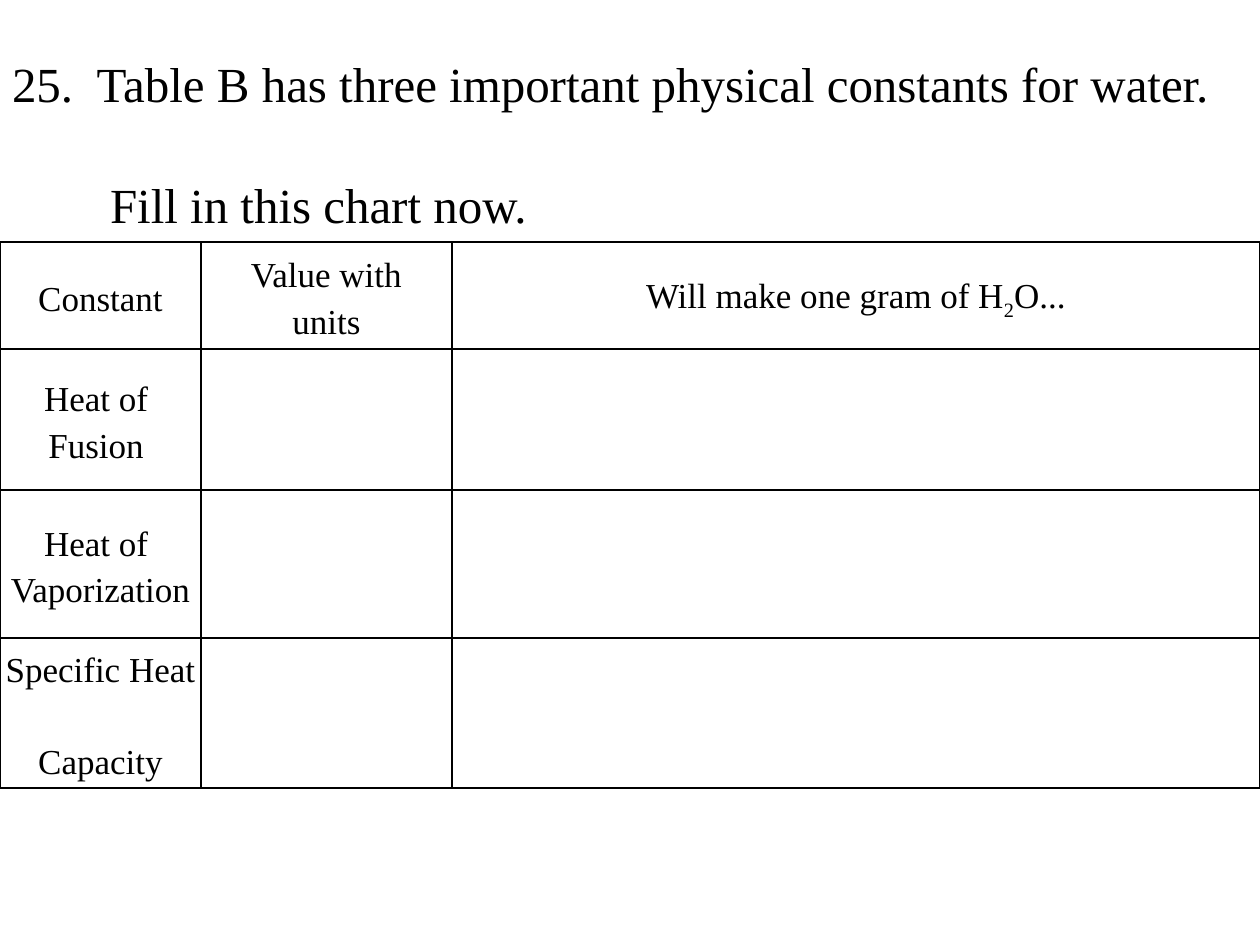
from dataclasses import dataclass

from lxml import etree
from pptx import Presentation
from pptx.dml.color import RGBColor
from pptx.enum.text import MSO_ANCHOR, MSO_AUTO_SIZE, PP_ALIGN
from pptx.oxml.ns import qn
from pptx.util import Pt

LEFT, CENTER = PP_ALIGN.LEFT, PP_ALIGN.CENTER
TOP, MIDDLE = MSO_ANCHOR.TOP, MSO_ANCHOR.MIDDLE
NO_AUTOFIT = MSO_AUTO_SIZE.NONE
TITLE_ONLY = 5

EMU_PER_PX = 914400 // 126
FONT = "Times New Roman"
INK = "000000"
SUBSCRIPT = -25000


@dataclass(frozen=True)
class Span:
    text: str
    baseline: int = 0


@dataclass(frozen=True)
class Line:
    spans: tuple[Span, ...]
    gap_after: int = 0  # points
    indent: int = 0  # px


def line(text: str, gap_after: int = 0, indent: int = 0) -> Line:
    return Line((Span(text),), gap_after, indent)


HEADING = (
    line("25.  Table B has three important physical constants for water.", 36),
    line("Fill in this chart now.", indent=98),
)
HEADERS = (
    (line("Constant", 6),),
    (line("Value with"), line("units", 6)),
    (Line((Span("Will make one gram of H"), Span("2", SUBSCRIPT), Span("O...")), 6),),
)
CONSTANTS = (
    (line("Heat of "), line("Fusion ", 6)),
    (line("Heat of "), line("Vaporization", 6)),
    (line("Specific Heat", 26), line("Capacity", 6)),
)
COLUMN_WIDTHS = (201, 251, 808)
ROW_HEIGHTS = (107, 141, 148, 150)


def px(length: int) -> int:
    return length * EMU_PER_PX


def color(value: str) -> RGBColor:
    return RGBColor.from_string(value)


def set_values(target, values: dict) -> None:
    for name, value in values.items():
        setattr(target, name, value)


def write_lines(frame, lines: tuple[Line, ...], size: int, align, spacing: float) -> None:
    for index, entry in enumerate(lines):
        para = frame.add_paragraph() if index else frame.paragraphs[0]
        set_values(para, {"alignment": align, "line_spacing": spacing,
                          "space_before": Pt(0), "space_after": Pt(entry.gap_after)})
        if entry.indent:
            para._p.get_or_add_pPr().set("marL", str(px(entry.indent)))
        for span in entry.spans:
            run = para.add_run()
            run.text = span.text
            set_values(run.font, {"name": FONT, "size": Pt(size)})
            run.font.color.rgb = color(INK)
            if span.baseline:
                run.font._element.set("baseline", str(span.baseline))


def add_borders(cell) -> None:
    properties = cell._tc.get_or_add_tcPr()
    for side in ("lnL", "lnR", "lnT", "lnB"):
        border = etree.SubElement(properties, qn(f"a:{side}"), w=str(Pt(1)))
        fill = etree.SubElement(border, qn("a:solidFill"))
        etree.SubElement(fill, qn("a:srgbClr"), val=INK)


def write_heading(page) -> None:
    title = page.shapes.title
    set_values(title, {"left": px(0), "top": px(42), "width": px(1260), "height": px(190)})
    frame = title.text_frame
    set_values(frame, {"word_wrap": True, "auto_size": NO_AUTOFIT, "vertical_anchor": TOP,
                       "margin_left": px(12), "margin_right": px(12),
                       "margin_top": px(11), "margin_bottom": px(6)})
    write_lines(frame, HEADING, 28, LEFT, 1.0)


def add_constants_table(page) -> None:
    table = page.shapes.add_table(
        len(ROW_HEIGHTS), len(COLUMN_WIDTHS), px(0), px(242),
        px(sum(COLUMN_WIDTHS)), px(sum(ROW_HEIGHTS))).table
    set_values(table, {"first_row": False, "horz_banding": False})
    for column, width in zip(table.columns, COLUMN_WIDTHS):
        column.width = px(width)
    for row, height in zip(table.rows, ROW_HEIGHTS):
        row.height = px(height)
    margins = {f"margin_{side}": px(5) for side in ("left", "right", "top", "bottom")}
    for cell in table.iter_cells():
        set_values(cell, {"vertical_anchor": MIDDLE, **margins})
        add_borders(cell)
        cell.fill.background()
    for column, lines in enumerate(HEADERS):
        write_lines(table.cell(0, column).text_frame, lines, 20, CENTER, 1.19)
    for row, lines in enumerate(CONSTANTS, start=1):
        write_lines(table.cell(row, 0).text_frame, lines, 20, CENTER, 1.19)


def main() -> None:
    deck = Presentation()
    set_values(deck, {"slide_width": px(1260), "slide_height": px(945)})
    page = deck.slides.add_slide(deck.slide_layouts[TITLE_ONLY])
    write_heading(page)
    add_constants_table(page)
    deck.save("out.pptx")


if __name__ == "__main__":
    main()
